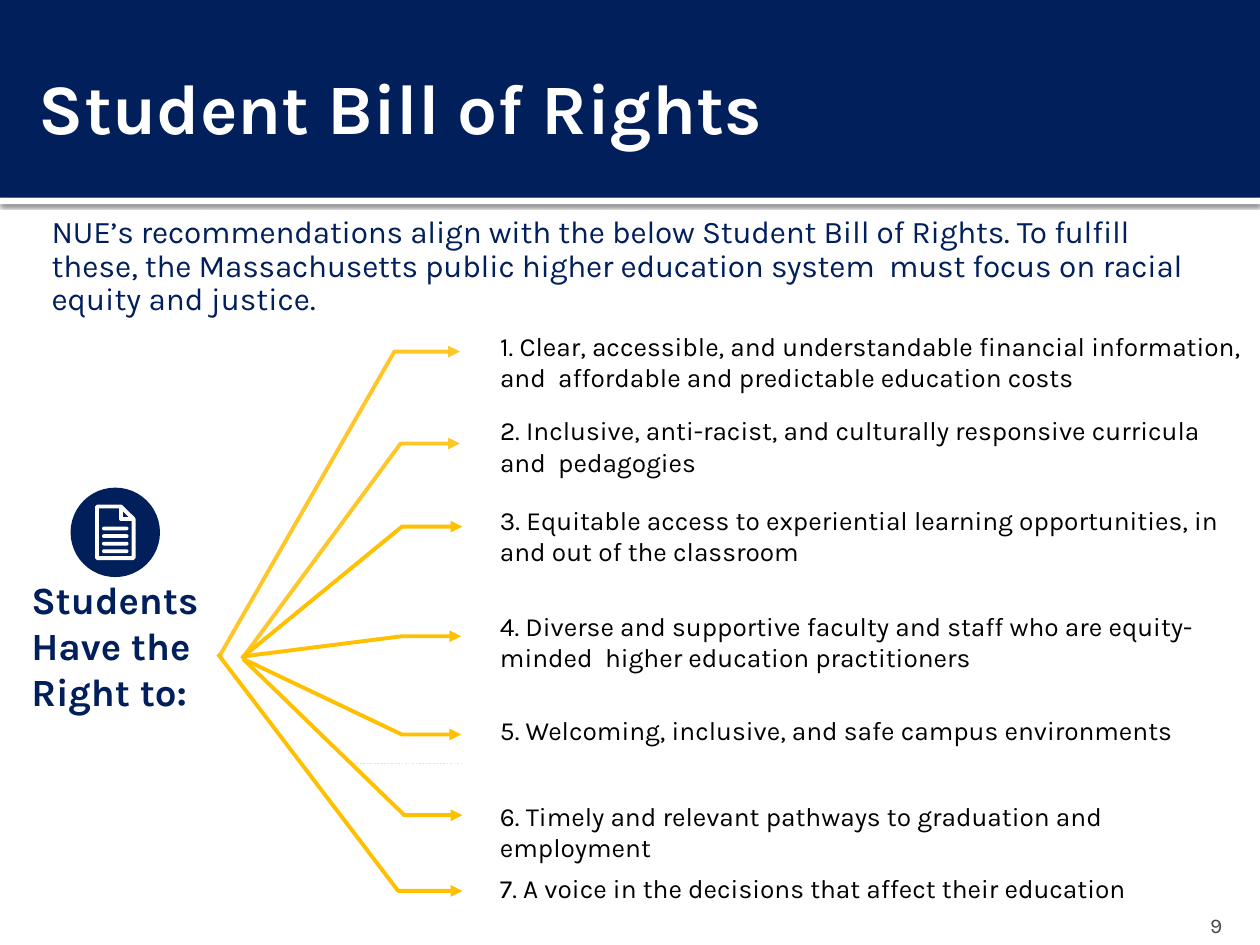
from lxml import etree
from pptx import Presentation
from pptx.dml import color
from pptx.enum import dml, shapes, text
from pptx.oxml import ns
from pptx.util import Inches, Pt

NAVY, WHITE, BLACK = "001F5B", "FFFFFF", "000000"
GOLD, AMBER = "FFC000", "FFC627"

RIGHTS = [
    ("Clear, accessible, and understandable financial information, and  affordable and predictable education costs", 2.57, 6.12, 0.61),
    ("Inclusive, anti-racist, and culturally responsive curricula and  pedagogies", 3.24, 6.05, 0.61),
    ("Equitable access to experiential learning opportunities, in and out of the classroom", 3.95, 6.13, 0.61),
    ("Diverse and supportive faculty and staff who are equity-minded  higher education practitioners", 4.79, 6.13, 0.61),
    ("Welcoming, inclusive, and safe campus environments", 5.62, 6.3, 0.35),
    ("Timely and relevant pathways to graduation and employment", 6.3, 6.13, 0.35),
    ("A voice in the decisions that affect their education", 6.87, 5.46, 0.35),
]
ARROWS = [
    (AMBER, (1.74, 5.21), (3.13, 2.79), 3.65),
    (AMBER, (1.92, 5.23), (3.18, 3.52), 3.65),
    (GOLD, (1.92, 5.22), (3.19, 4.18), 3.67),
    (GOLD, (1.93, 5.21), (3.19, 5.05), 3.66),
    (GOLD, (1.93, 5.23), (3.19, 5.83), 3.66),
    (GOLD, (1.93, 5.23), (3.21, 6.47), 3.67),
    (GOLD, (1.73, 5.19), (3.16, 7.07), 3.67),
]
INTRO = [
    ("NUE’s recommendations align with the below Student Bill of Rights. To fulfill", -10),
    (" these", 0),
    (", the Massachusetts public higher education system  must focus", -10),
    (" on ", 0),
    ("racial ", -10),
    ("equity and justice.", 0),
]


def rgb(value):
    return color.RGBColor.from_string(value)


def add_solid(page, preset, at, fill):
    shape = page.shapes.add_shape(preset, *map(Inches, at))
    shape.shadow.inherit = False
    shape.fill.solid()
    shape.fill.fore_color.rgb = rgb(fill)
    shape.line.fill.background()
    return shape


def style_span(span, size, fill, bold=False):
    span.font.name = "Karla"
    span.font.size = Pt(size)
    span.font.color.rgb = rgb(fill)
    span.font.bold = bold


def add_box(page, at, insets=(0.1, 0.05, 0.1, 0.05), anchor=text.MSO_ANCHOR.TOP):
    box = page.shapes.add_textbox(*map(Inches, at))
    frame = box.text_frame
    frame.word_wrap = True
    frame.vertical_anchor = anchor
    (frame.margin_left, frame.margin_top,
     frame.margin_right, frame.margin_bottom) = map(Inches, insets)
    return frame


def add_label(page, at, words, size, fill, bold=False, **layout):
    para = add_box(page, at, **layout).paragraphs[0]
    para.text = words
    style_span(para.runs[0], size, fill, bold)
    return para


def add_path(page, points, fill, width, close=False):
    start, *rest = [tuple(map(Inches, point)) for point in points]
    builder = page.shapes.build_freeform(*start)
    builder.add_line_segments(rest, close=close)
    path = builder.convert_to_shape()
    path.shadow.inherit = False
    path.fill.background()
    path.line.color.rgb = rgb(fill)
    path.line.width = Pt(width)
    return path


def add_arrow(page, fill, start, bend, end_x):
    arrow = add_path(page, [start, bend, (end_x, bend[1])], fill, 2.25)
    etree.SubElement(arrow.line._get_or_add_ln(), ns.qn("a:tailEnd"), type="triangle")


def add_dotted_line(page, start, end):
    line = page.shapes.add_connector(
        shapes.MSO_CONNECTOR.STRAIGHT, *map(Inches, start + end))
    line.line.color.rgb = rgb("C5EEFF")
    line.line.width = Pt(1)
    line.line.dash_style = dml.MSO_LINE.ROUND_DOT
    etree.SubElement(line._element.spPr, ns.qn("a:effectLst"))


def add_header(page):
    strip = add_solid(page, shapes.MSO_SHAPE.RECTANGLE, (0, 1.57, 10, 0.05), WHITE)
    effects = strip._element.spPr.find(ns.qn("a:effectLst"))
    shadow = etree.SubElement(
        effects, ns.qn("a:outerShdw"), blurRad=str(Pt(2.5)), dist=str(Pt(0.8)),
        dir="5400000", algn="t", rotWithShape="0")
    tint = etree.SubElement(shadow, ns.qn("a:srgbClr"), val=BLACK)
    etree.SubElement(tint, ns.qn("a:alpha"), val="60000")
    add_solid(page, shapes.MSO_SHAPE.RECTANGLE, (0, 0, 10, 1.57), NAVY)
    add_label(page, (0.31, 0.38, 9, 0.92), "Student Bill of Rights", 40.5, WHITE, True,
              insets=(0, 0, 0, 0), anchor=text.MSO_ANCHOR.MIDDLE)


def add_intro(page):
    para = add_box(page, (0.4, 1.67, 9.07, 0.84), insets=(0, 0.04, 0, 0)).paragraphs[0]
    para.line_spacing = Pt(19.4)
    para.space_before = Pt(3.2)
    para._p.get_or_add_pPr().set("marL", str(Inches(0.01)))
    for words, spacing in INTRO:
        span = para.add_run()
        span.text = words
        style_span(span, 18, NAVY)
        span.font._element.set("spc", str(spacing))


def add_document_icon(page):
    add_solid(page, shapes.MSO_SHAPE.OVAL, (0.56, 3.87, 0.71, 0.71), NAVY)
    left, top, right, bottom, fold_x, fold_y = 0.77, 4.02, 1.06, 4.43, 0.96, 4.12
    add_path(page, [(left, top), (fold_x, top), (right, fold_y), (right, bottom),
                    (left, bottom)], WHITE, 2.25, close=True)
    add_path(page, [(fold_x, top), (fold_x, fold_y), (right, fold_y)], WHITE, 2)
    for row in range(4):
        bar = add_solid(page, shapes.MSO_SHAPE.ROUNDED_RECTANGLE,
                        (0.81, 4.18 + 0.06 * row, 0.21, 0.03), WHITE)
        bar.adjustments[0] = 0.5


def main():
    deck = Presentation()
    deck.slide_width, deck.slide_height = Inches(10), Inches(7.5)
    page = deck.slides.add_slide(deck.slide_layouts[6])
    add_header(page)
    add_intro(page)
    add_label(page, (0.15, 4.52, 1.75, 1.21), "Students Have the Right to:", 22, NAVY, True)
    add_dotted_line(page, (3.67, 6.06), (2.81, 6.06))
    for arrow in ARROWS:
        add_arrow(page, *arrow)
    for number, (words, top, width, height) in enumerate(RIGHTS, 1):
        para = add_label(page, (3.87, top, width, height), f"{number}. {words}", 15, BLACK)
        para.space_after = Pt(12)
    add_document_icon(page)
    number = add_label(page, (9, 7.14, 0.8, 0.3), "9", 12, "454545",
                       insets=(0.1, 0.05, 0.1, 0), anchor=text.MSO_ANCHOR.BOTTOM)
    number.alignment = text.PP_ALIGN.RIGHT
    deck.save("out.pptx")


if __name__ == "__main__":
    main()
